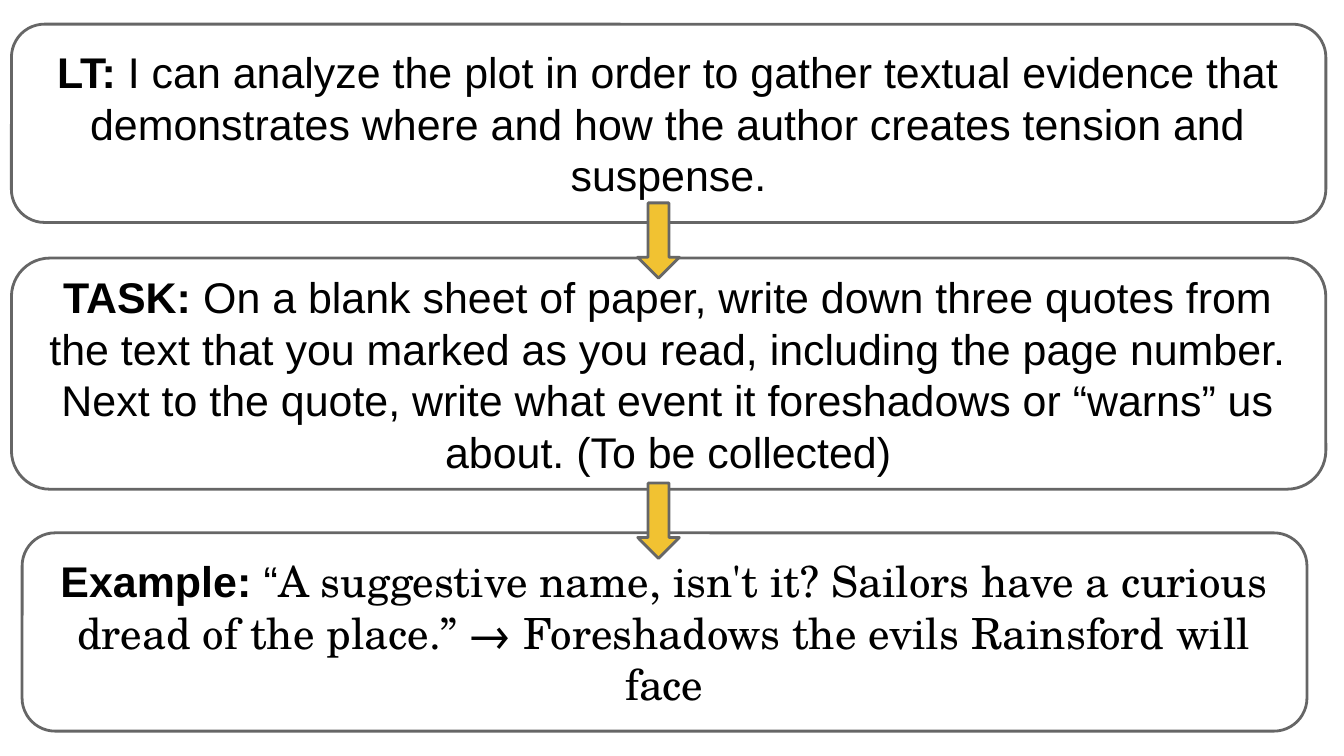
from pptx import Presentation
from pptx.dml.color import RGBColor
from pptx.enum.shapes import MSO_SHAPE
from pptx.enum.text import MSO_ANCHOR, PP_ALIGN
from pptx.util import Pt

ROUNDED = MSO_SHAPE.ROUNDED_RECTANGLE
DOWN_ARROW = MSO_SHAPE.DOWN_ARROW
MIDDLE = MSO_ANCHOR.MIDDLE
CENTER = PP_ALIGN.CENTER

WHITE = RGBColor(0xFF, 0xFF, 0xFF)
BLACK = RGBColor(0, 0, 0)
GRAY = RGBColor(0x66, 0x66, 0x66)
GOLD = RGBColor(0xF1, 0xC2, 0x32)

SANS = "Arial"
SERIF = "TeX Gyre Schola"
EMU_PER_PX = 4572
SLIDE_WIDTH, SLIDE_HEIGHT = 2000, 1125
INSET = 20

STEPS = [
    ((17, 384, 1956, 344), [
        [("TASK:", SANS, True),
         (" On a blank sheet of paper, write down three quotes from the text "
          "that you marked as you read, including the page number.", SANS, False)],
        [("Next to the quote, write what event it foreshadows or “warns” us "
          "about. (To be collected)", SANS, False)],
    ]),
    ((17, 36, 1956, 295), [
        [("LT: ", SANS, True),
         ("I can analyze the plot in order to gather textual evidence that "
          "demonstrates where and how the author creates tension and suspense.",
          SANS, False)],
    ]),
    ((33, 793, 1912, 295), [
        [("Example: ", SANS, True),
         ("“", SANS, False),
         ("A suggestive name, isn't it? Sailors have a curious dread of the "
          "place.” → Foreshadows the evils Rainsford will face", SERIF, False)],
    ]),
]
ARROW_LEFT, ARROW_WIDTH, ARROW_HEIGHT = 949, 62, 112
ARROW_TOPS = [302, 719]


def px(length):
    return length * EMU_PER_PX


def add_outlined(slide, preset, box, fill):
    outlined = slide.shapes.add_shape(preset, *map(px, box))
    outlined.shadow.inherit = False
    outlined.fill.solid()
    outlined.fill.fore_color.rgb = fill
    outlined.line.color.rgb = GRAY
    outlined.line.width = Pt(1.5)
    return outlined


def write_step(frame, paragraphs):
    frame_format = {"word_wrap": True, "vertical_anchor": MIDDLE}
    for side in ("left", "top", "right", "bottom"):
        frame_format[f"margin_{side}"] = px(INSET)
    for name, value in frame_format.items():
        setattr(frame, name, value)
    for index, runs in enumerate(paragraphs):
        paragraph = frame.add_paragraph() if index else frame.paragraphs[0]
        paragraph.alignment = CENTER
        for words, typeface, bold in runs:
            run = paragraph.add_run()
            run.text = words
            run_format = {"name": typeface, "size": Pt(23), "bold": bold}
            for name, value in run_format.items():
                setattr(run.font, name, value)
            run.font.color.rgb = BLACK


def main():
    deck = Presentation()
    deck.slide_width, deck.slide_height = px(SLIDE_WIDTH), px(SLIDE_HEIGHT)
    slide = deck.slides.add_slide(deck.slide_layouts[6])
    for box, paragraphs in STEPS:
        step = add_outlined(slide, ROUNDED, box, WHITE)
        write_step(step.text_frame, paragraphs)
    for top in ARROW_TOPS:
        add_outlined(slide, DOWN_ARROW,
                     (ARROW_LEFT, top, ARROW_WIDTH, ARROW_HEIGHT), GOLD)
    deck.save("out.pptx")


if __name__ == "__main__":
    main()
